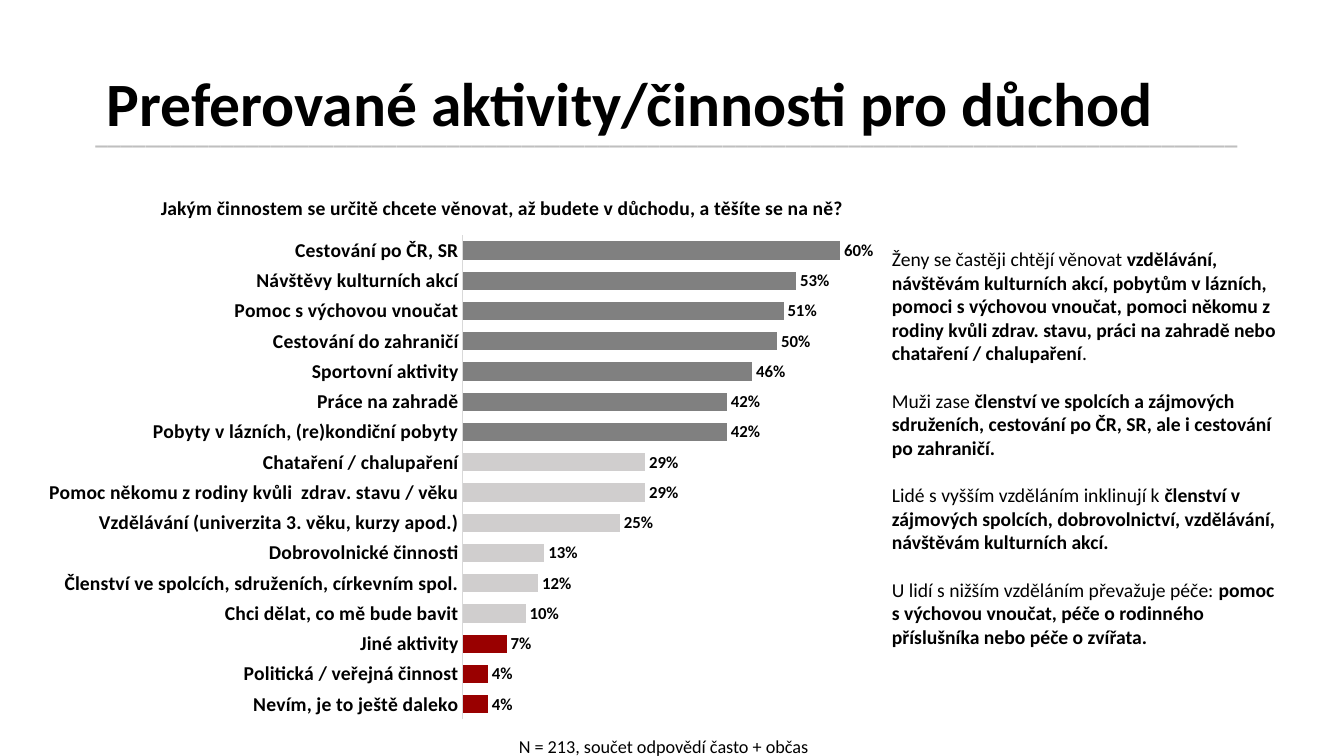
from lxml import etree
from pptx import Presentation
from pptx.chart.data import CategoryChartData
from pptx.dml.color import RGBColor
from pptx.enum.chart import XL_CHART_TYPE, XL_LABEL_POSITION, XL_TICK_MARK
from pptx.enum.text import MSO_ANCHOR
from pptx.oxml.ns import qn
from pptx.util import Pt

BAR_CHART = XL_CHART_TYPE.BAR_CLUSTERED
OUTSIDE_END = XL_LABEL_POSITION.OUTSIDE_END
NO_TICKS = XL_TICK_MARK.NONE
TOP = MSO_ANCHOR.TOP
MIDDLE = MSO_ANCHOR.MIDDLE

FONT = "Calibri"
COLORS = {
    "text": "000000",
    "rule": "BFBFBF",
    "axis": "D9D9D9",
    "high": "808080",
    "medium": "D0CECE",
    "low": "990000",
}

QUESTION = "Jakým činnostem se určitě chcete věnovat, až budete v důchodu, a těšíte se na ně?"
ACTIVITIES = [
    ("Cestování po ČR, SR", 0.60),
    ("Návštěvy kulturních akcí", 0.53),
    ("Pomoc s výchovou vnoučat", 0.51),
    ("Cestování do zahraničí", 0.50),
    ("Sportovní aktivity", 0.46),
    ("Práce na zahradě", 0.42),
    ("Pobyty v lázních, (re)kondiční pobyty", 0.42),
    ("Chataření / chalupaření", 0.29),
    ("Pomoc někomu z rodiny kvůli  zdrav. stavu / věku", 0.29),
    ("Vzdělávání (univerzita 3. věku, kurzy apod.)", 0.25),
    ("Dobrovolnické činnosti", 0.13),
    ("Členství ve spolcích, sdruženích, církevním spol.", 0.12),
    ("Chci dělat, co mě bude bavit", 0.10),
    ("Jiné aktivity", 0.07),
    ("Politická / veřejná činnost", 0.04),
    ("Nevím, je to ještě daleko", 0.04),
]
FINDINGS = [
    [("Ženy se častěji chtějí věnovat ", False),
     ("vzdělávání, návštěvám kulturních akcí, pobytům v lázních, pomoci s výchovou "
      "vnoučat, pomoci někomu z rodiny kvůli zdrav. stavu, práci na zahradě nebo "
      "chataření / chalupaření", True),
     (".", False)],
    [("Muži zase ", False),
     ("členství ve spolcích a zájmových sdruženích, cestování po ČR, SR, ale i "
      "cestování po zahraničí.", True)],
    [("Lidé s vyšším vzděláním inklinují k ", False),
     ("členství v zájmových spolcích, dobrovolnictví, vzdělávání, návštěvám "
      "kulturních akcí.", True)],
    [("U lidí s nižším vzděláním převažuje péče: ", False),
     ("pomoc s výchovou vnoučat, péče o rodinného příslušníka nebo péče o zvířata.", True)],
]


def style_font(font, size, bold=False, color="text"):
    for name, value in {"name": FONT, "size": Pt(size), "bold": bold}.items():
        setattr(font, name, value)
    font.color.rgb = RGBColor.from_string(COLORS[color])


def add_text(page, bounds, paragraphs, size, color="text", anchor=TOP, **spacing):
    box = page.shapes.add_textbox(*map(Pt, bounds))
    frame = box.text_frame
    frame.word_wrap = True
    frame.vertical_anchor = anchor
    for index, spans in enumerate(paragraphs):
        para = frame.paragraphs[0] if index == 0 else frame.add_paragraph()
        for name, value in spacing.items():
            setattr(para, name, value)
        for text, bold in spans:
            span = para.add_run()
            span.text = text
            style_font(span.font, size, bold, color)


def set_layout(parent, position, **values):
    for old in parent.findall(qn("c:layout")):
        parent.remove(old)
    layout = etree.Element(qn("c:layout"))
    manual = etree.SubElement(layout, qn("c:manualLayout"))
    for name, value in values.items():
        etree.SubElement(manual, qn(f"c:{name}")).set("val", str(value))
    parent.insert(position, layout)


def bar_color(share):
    if share >= 0.4:
        return COLORS["high"]
    return COLORS["medium"] if share >= 0.1 else COLORS["low"]


def style_axes(chart):
    category_axis = chart.category_axis
    category_axis.major_tick_mark = NO_TICKS
    category_axis.format.line.color.rgb = RGBColor.from_string(COLORS["axis"])
    category_axis.format.line.width = Pt(0.75)
    style_font(category_axis.tick_labels.font, 14, True)
    value_axis = chart.value_axis
    settings = {"visible": False, "has_major_gridlines": False,
                "minimum_scale": 0, "maximum_scale": 0.7}
    for name, value in settings.items():
        setattr(value_axis, name, value)


def style_bars(plot, shares):
    plot.gap_width = 65
    plot.vary_by_categories = False
    plot.has_data_labels = True
    labels = plot.data_labels
    settings = {"show_value": True, "number_format": "0%",
                "number_format_is_linked": False, "position": OUTSIDE_END}
    for name, value in settings.items():
        setattr(labels, name, value)
    style_font(labels.font, 12, True)
    for index, share in enumerate(shares):
        fill = plot.series[0].points[index].format.fill
        fill.solid()
        fill.fore_color.rgb = RGBColor.from_string(bar_color(share))


def add_activity_chart(page, bounds):
    names, shares = zip(*reversed(ACTIVITIES))
    chart_data = CategoryChartData(number_format="0%")
    chart_data.categories = names
    chart_data.add_series(QUESTION, shares)
    chart = page.shapes.add_chart(BAR_CHART, *map(Pt, bounds), chart_data).chart
    chart.has_legend = False
    style_font(chart.font, 10)
    title_frame = chart.chart_title.text_frame
    title_frame.text = QUESTION
    style_font(title_frame.paragraphs[0].runs[0].font, 14, True)
    style_axes(chart)
    style_bars(chart.plots[0], shares)
    title = chart.element.find(".//" + qn("c:title"))
    set_layout(title, 1, xMode="edge", yMode="edge", x=0.15, y=0.04)
    plot_area = chart.element.find(".//" + qn("c:plotArea"))
    set_layout(plot_area, 0, layoutTarget="inner", xMode="edge", yMode="edge",
               x=0.49, y=0.12, w=0.49, h=0.86)


def main():
    deck = Presentation()
    deck.slide_width, deck.slide_height = Pt(960), Pt(540)
    page = deck.slides.add_slide(deck.slide_layouts[6])
    add_text(page, (61, 80.5, 838, 29.5), [[("_" * 91, True)]], 18, "rule",
             line_spacing=1.07, space_after=Pt(8))
    add_text(page, (69, 24, 775.5, 104.5),
             [[("Preferované aktivity/činnosti pro důchod", True)]], 44,
             anchor=MIDDLE, line_spacing=0.9)
    add_activity_chart(page, (16, 120, 642, 402))
    add_text(page, (363.5, 522, 232.5, 23),
             [[("N = 213, součet odpovědí často + občas", False)]], 13)
    add_text(page, (630, 173, 291.5, 296), FINDINGS, 14, space_after=Pt(17))
    deck.save("out.pptx")


if __name__ == "__main__":
    main()
